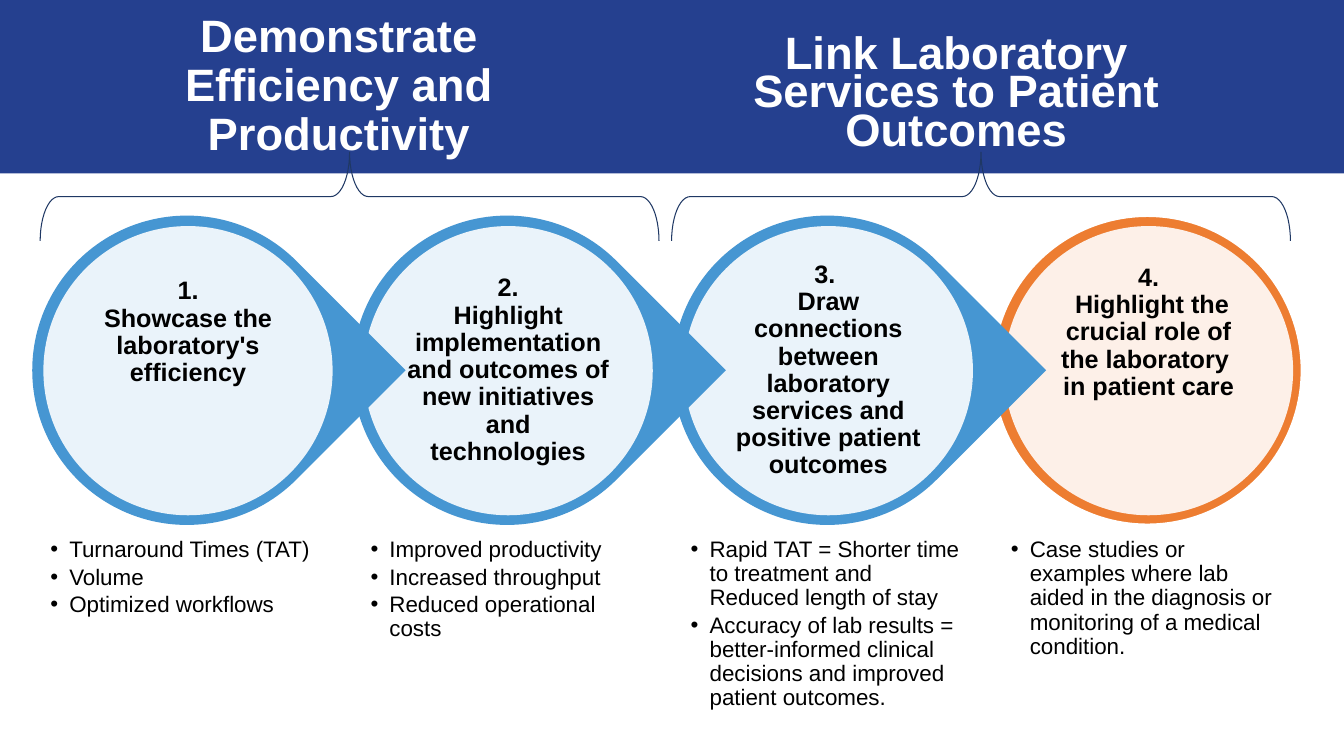
from lxml.etree import SubElement
from pptx import Presentation
from pptx.dml.color import RGBColor
from pptx.enum.shapes import MSO_SHAPE as SHAPE
from pptx.enum.text import MSO_ANCHOR as ANCHOR, MSO_AUTO_SIZE as AUTO, PP_ALIGN as ALIGN
from pptx.oxml.ns import qn
from pptx.util import Pt

NAVY = RGBColor(0x25, 0x40, 0x8F)
BLUE = RGBColor(0x46, 0x96, 0xD2)
ORANGE = RGBColor(0xED, 0x7D, 0x31)
BRACE = RGBColor(0x1F, 0x38, 0x64)
WHITE = RGBColor(0xFF, 0xFF, 0xFF)
BLACK = RGBColor(0, 0, 0)

STEPS = [
    (["1.", "Showcase the laboratory's efficiency"], 55.5,
     ["Turnaround Times (TAT)", "Volume", "Optimized workflows"]),
    (["2.", "Highlight implementation and outcomes of new initiatives and technologies"], 1.5,
     ["Improved productivity", "Increased throughput", "Reduced operational costs"]),
    (["3. ", "Draw connections between laboratory services and positive patient outcomes"], 1.5,
     ["Rapid TAT = Shorter time to treatment and Reduced length of stay",
      "Accuracy of lab results = better-informed clinical decisions and improved patient outcomes."]),
    (["4.", " Highlight the crucial role of the laboratory ", "in patient care"], 55.5,
     ["Case studies or examples where lab aided in the diagnosis or monitoring of a medical condition."]),
]


class Deck:
    """Holds the text styles and the current slide, and draws its elements."""

    heading = {"name": "Arial", "size": Pt(32.4), "bold": True}
    label = {"name": "Arial", "size": Pt(18), "bold": True}
    bullet = {"name": "Arial", "size": Pt(16), "bold": False}

    def __init__(self, prs):
        self.s = prs.slides.add_slide(prs.slide_layouts[5])

    def shape(self, kind, x, y, w, h, fill=None, line=None, width=1, opacity=None, rotation=0, adj=()):
        sp = self.s.shapes.add_shape(kind, Pt(x), Pt(y), Pt(w), Pt(h))
        sp.shadow.inherit = False
        sp.rotation = rotation
        for i, value in enumerate(adj):
            sp.adjustments[i] = value
        if fill is None:
            sp.fill.background()
        else:
            sp.fill.solid()
            sp.fill.fore_color.rgb = fill
        if opacity:
            color = next(sp.element.iter(qn("a:srgbClr")))
            SubElement(color, qn("a:alpha"), val=str(opacity * 1000))
        if line is None:
            sp.line.fill.background()
        else:
            sp.line.color.rgb = line
            sp.line.width = Pt(width)
        return sp

    def set_text(self, sp, texts, style, color, spacing=0.9, align=ALIGN.CENTER,
                 anchor=ANCHOR.MIDDLE, insets=(7.2, 3.6, 7.2, 3.6), bullets=False):
        tf = sp.text_frame
        frame = {"word_wrap": True, "auto_size": AUTO.NONE, "vertical_anchor": anchor}
        sides = ("margin_left", "margin_top", "margin_right", "margin_bottom")
        frame.update(zip(sides, map(Pt, insets)))
        for key, value in frame.items():
            setattr(tf, key, value)
        for i, text in enumerate(texts):
            p = tf.add_paragraph() if i else tf.paragraphs[0]
            if bullets:
                pPr = p._p.get_or_add_pPr()
                pPr.set("marL", str(Pt(13.5)))
                pPr.set("indent", str(-Pt(13.5)))
                SubElement(pPr, qn("a:buFont"), typeface="Arial")
                SubElement(pPr, qn("a:buChar"), char="•")
            p.alignment = align
            p.line_spacing = spacing
            p.space_before = Pt(2.4 if bullets and i else 0)
            r = p.add_run()
            r.text = text
            for key, value in style.items():
                setattr(r.font, key, value)
            r.font.color.rgb = color

    def text(self, x, y, w, h, texts, style, color, **fmt):
        sp = self.s.shapes.add_textbox(Pt(x), Pt(y), Pt(w), Pt(h))
        self.set_text(sp, texts, style, color, **fmt)

    def title(self, x, y, w, h, text):
        sp = self.s.shapes.title
        for key, value in zip(("left", "top", "width", "height"), (x, y, w, h)):
            setattr(sp, key, Pt(value))
        self.set_text(sp, [text], self.heading, WHITE)

    def band(self, w, h):
        sp = self.shape(SHAPE.RECTANGLE, 0, 0, w, h, NAVY)
        self.s.shapes.title.element.addprevious(sp.element)

    def step(self, x, labels, bottom, items, last):
        if last:
            self.shape(SHAPE.OVAL, x - 8, 154, 221, 221, ORANGE, WHITE, 2)
        else:
            self.shape(SHAPE.TEAR, x - 8, 154, 221, 221, BLUE, rotation=45, adj=[1])
        self.shape(SHAPE.OVAL, x, 161.5, 206.6, 206.6, WHITE, opacity=89)
        self.text(x + 29.5, 190.8, 147.6, 147.6, labels, self.label, BLACK,
                  insets=(1.5, 1.5, 1.5, bottom))
        self.text(x, 379.5, 206.6, 121.7, items, self.bullet, BLACK, align=ALIGN.LEFT,
                  anchor=ANCHOR.TOP, insets=(5, 5, 5, 5), bullets=True)

    def brace(self, x):
        self.shape(SHAPE.LEFT_BRACE, x, -80.6, 63.4, 442, line=BRACE, width=0.75,
                   rotation=90, adj=[0.21, 0.5])


def main():
    prs = Presentation()
    prs.slide_width, prs.slide_height = Pt(960), Pt(540)
    deck = Deck(prs)
    deck.band(960, 123.8)
    deck.title(66, 15.8, 352, 92, "Demonstrate Efficiency and Productivity")
    for i, (labels, bottom, items) in reversed(list(enumerate(STEPS))):
        deck.step(31 + 228.7 * i, labels, bottom, items, i == len(STEPS) - 1)
    deck.text(507, 23, 352, 92, ["Link Laboratory Services to Patient Outcomes"],
              deck.heading, WHITE, spacing=0.7)
    for x in (218, 669):
        deck.brace(x)
    prs.save("out.pptx")


if __name__ == "__main__":
    main()
